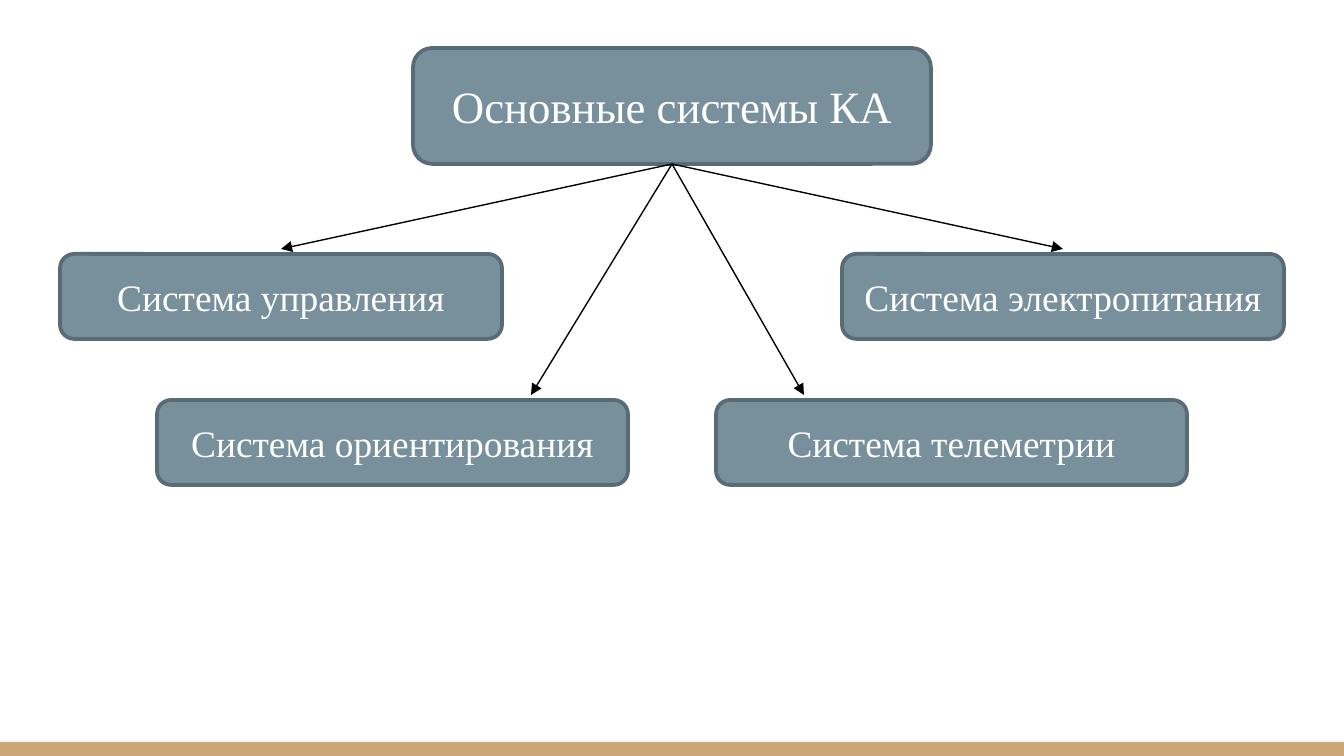
"""Build a slide that shows the main systems of a spacecraft as a tree."""
from dataclasses import dataclass

from lxml.etree import SubElement
from pptx import Presentation
from pptx.dml.color import RGBColor
from pptx.enum.shapes import MSO_CONNECTOR as Connector, MSO_SHAPE as Shape
from pptx.enum.text import MSO_ANCHOR as Anchor, PP_ALIGN as Align
from pptx.oxml.ns import qn
from pptx.util import Pt

EMU_PER_PX = 914400 / 134.4
SLIDE_WIDTH, SLIDE_HEIGHT = 1344, 756
BOTTOM_SIDE = 2
BAND_HEIGHT = 14
ARROW_GAP = 5
ROOT_BOX = (413, 48, 518, 116)
SYSTEM_HEIGHT = 85
ROWS = (
    (60, 254, 442, (("Система управления", 281), ("Система электропитания", 1063))),
    (157, 400, 471, (("Система ориентирования", 531), ("Система телеметрии", 804))),
)


@dataclass(frozen=True)
class Theme:
    font: str = "Times New Roman"
    root_size: int = 24
    system_size: int = 20
    border_width: float = 2
    arrow_width: float = 0.75
    box: RGBColor = RGBColor(0x78, 0x90, 0x9C)
    border: RGBColor = RGBColor(0x59, 0x6B, 0x73)
    text: RGBColor = RGBColor(0xFF, 0xFF, 0xFF)
    arrow: RGBColor = RGBColor(0x00, 0x00, 0x00)
    band: RGBColor = RGBColor(0xCC, 0xA6, 0x77)


THEME = Theme()


def px(*lengths):
    return [round(length * EMU_PER_PX) for length in lengths]


def add_band(slide):
    box = px(0, SLIDE_HEIGHT - BAND_HEIGHT, SLIDE_WIDTH, BAND_HEIGHT)
    band = slide.shapes.add_shape(Shape.RECTANGLE, *box)
    band.shadow.inherit = False
    band.fill.solid()
    band.fill.fore_color.rgb = THEME.band
    band.line.fill.background()


def add_box(slide, text, box, size):
    shape = slide.shapes.add_shape(Shape.ROUNDED_RECTANGLE, *px(*box))
    shape.shadow.inherit = False
    shape.fill.solid()
    shape.fill.fore_color.rgb = THEME.box
    shape.line.color.rgb = THEME.border
    shape.line.width = Pt(THEME.border_width)
    frame = shape.text_frame
    frame.word_wrap = True
    frame.vertical_anchor = Anchor.MIDDLE
    frame.margin_left = frame.margin_right = 0
    paragraph = frame.paragraphs[0]
    paragraph.text = text
    paragraph.alignment = Align.CENTER
    paragraph.font.name = THEME.font
    paragraph.font.size = Pt(size)
    paragraph.font.color.rgb = THEME.text
    return shape


def add_arrow(slide, root, tip_x, tip_y):
    arrow = slide.shapes.add_connector(Connector.STRAIGHT, 0, 0, *px(tip_x, tip_y))
    arrow.begin_connect(root, BOTTOM_SIDE)
    arrow.line.color.rgb = THEME.arrow
    arrow.line.width = Pt(THEME.arrow_width)
    SubElement(arrow.line._get_or_add_ln(), qn("a:tailEnd"), type="triangle")
    SubElement(arrow._element.spPr, qn("a:effectLst"))


def main():
    presentation = Presentation()
    presentation.slide_width, presentation.slide_height = px(SLIDE_WIDTH, SLIDE_HEIGHT)
    slide = presentation.slides.add_slide(presentation.slide_layouts.get_by_name("Blank"))
    add_band(slide)
    root = add_box(slide, "Основные системы КА", ROOT_BOX, THEME.root_size)
    for margin, top, width, systems in ROWS:
        lefts = (margin, SLIDE_WIDTH - margin - width)
        for left, (name, tip_x) in zip(lefts, systems):
            add_box(slide, name, (left, top, width, SYSTEM_HEIGHT), THEME.system_size)
            add_arrow(slide, root, tip_x, top - ARROW_GAP)
    presentation.save("out.pptx")


if __name__ == "__main__":
    main()
